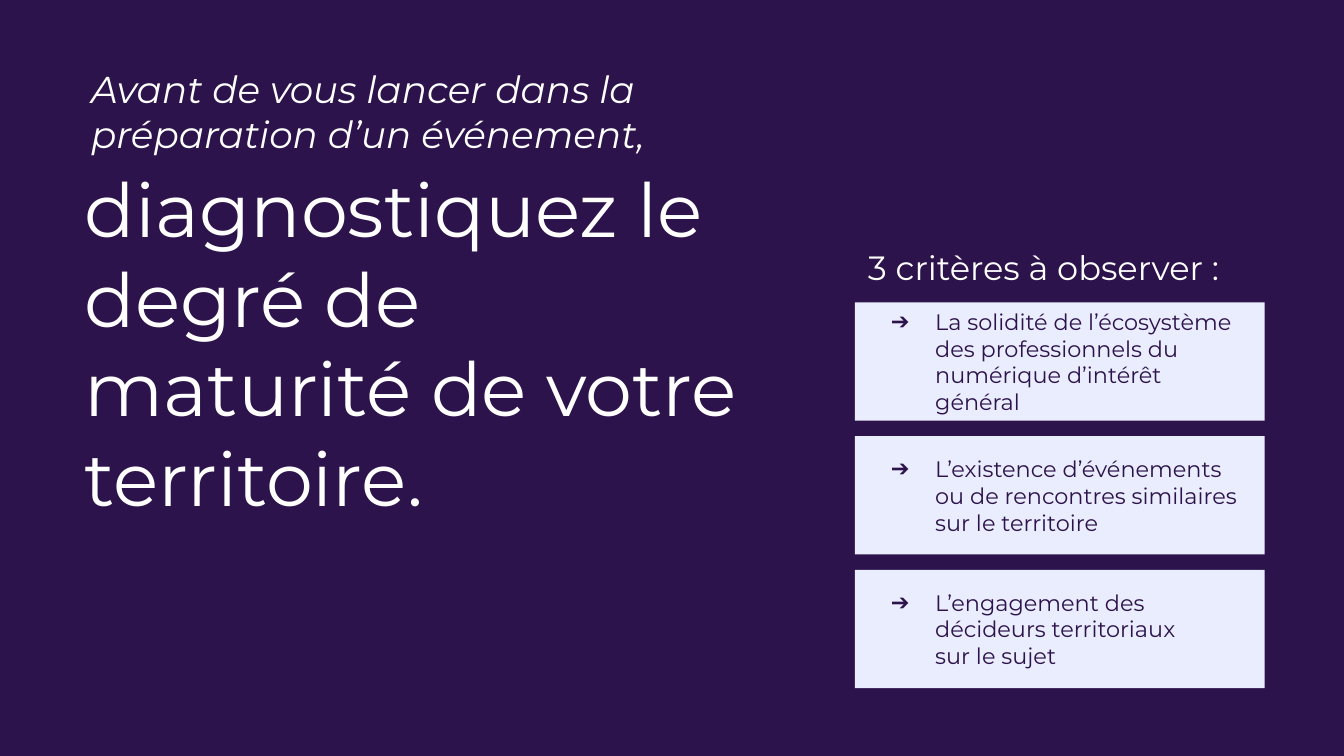
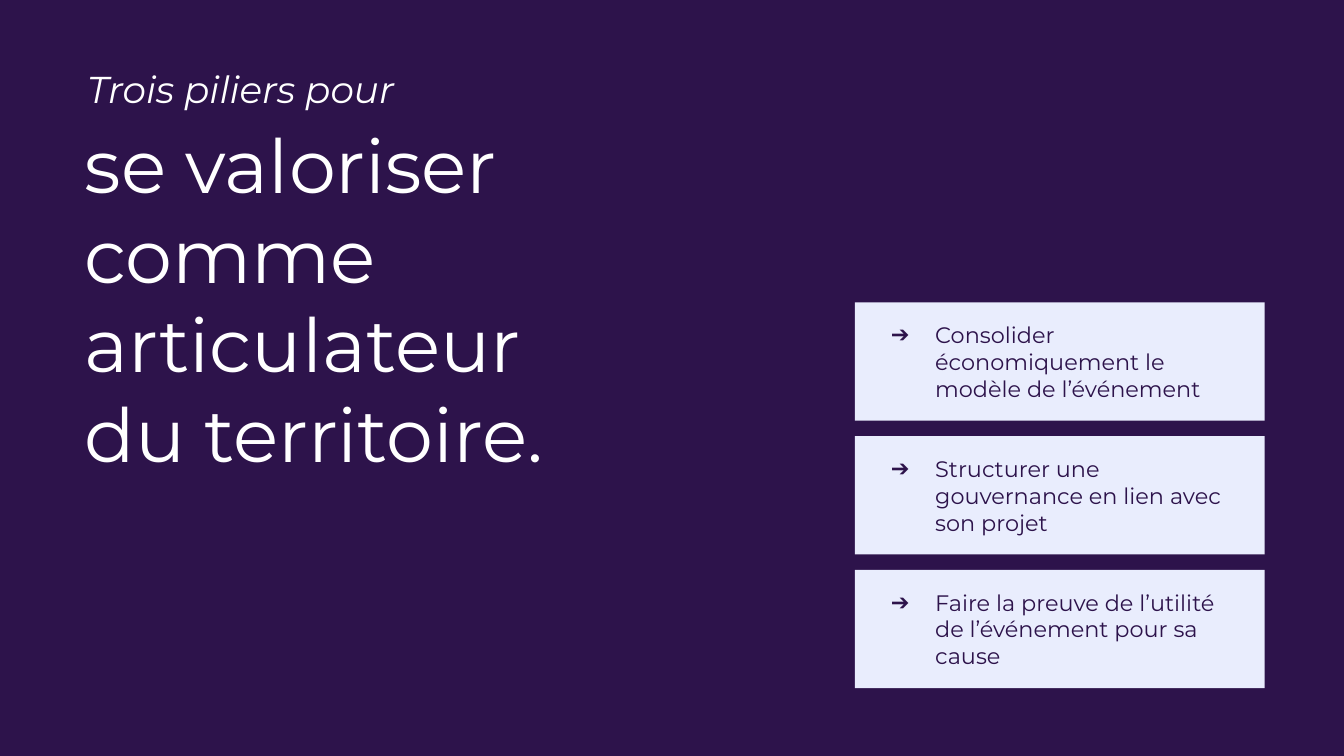
from dataclasses import dataclass

from lxml.etree import SubElement
from pptx import Presentation
from pptx.dml.color import RGBColor
from pptx.enum.shapes import MSO_SHAPE as Shape
from pptx.enum.text import MSO_ANCHOR as Anchor, MSO_AUTO_SIZE as Fit, PP_ALIGN as Align
from pptx.oxml.ns import qn
from pptx.util import Inches, Pt


@dataclass(frozen=True)
class Theme:
    font: str = "Montserrat"
    dark: str = "2D134B"
    pale: str = "E9EDFD"
    white: str = "FFFFFF"
    head: int = 40
    intro: int = 20
    label: int = 18
    body: int = 12


THEME = Theme()
LEFT, WIDTH, HEIGHT = 6.36, 3.05, 0.88
TOP, BOTTOM = 2.25, 5.12
HANG = 0.33


def color(code):
    return RGBColor.from_string(code)


def write(shape, lines, size, ink, slant=False, inset=0.1, anchor=Anchor.TOP, grow=False):
    frame = shape.text_frame
    frame.word_wrap = True
    frame.auto_size = Fit.SHAPE_TO_FIT_TEXT if grow else Fit.NONE
    frame.vertical_anchor = anchor
    frame.margin_left = frame.margin_right = Inches(inset)
    frame.margin_top = frame.margin_bottom = Inches(inset)
    para = frame.paragraphs[0]
    para.alignment = Align.LEFT
    for row, line in enumerate(lines):
        if row:
            para.add_line_break()
        run = para.add_run()
        run.text = line
        font = run.font
        font.name, font.size = THEME.font, Pt(size)
        font.color.rgb = color(ink)
        if slant:
            font.italic = True
    return para


def add_text(slide, box, lines, size, **style):
    shape = slide.shapes.add_textbox(*map(Inches, box))
    write(shape, lines, size, THEME.white, **style)


def add_arrow(para):
    props = para._p.get_or_add_pPr()
    props.set("marL", str(Inches(0.5)))
    props.set("indent", str(-Inches(HANG)))
    tint = SubElement(props, qn("a:buClr"))
    SubElement(tint, qn("a:srgbClr")).set("val", THEME.dark)
    SubElement(props, qn("a:buFont")).set("typeface", THEME.font)
    SubElement(props, qn("a:buChar")).set("char", "➔")


def add_card(slide, top, lines):
    card = slide.shapes.add_shape(Shape.RECTANGLE, *map(Inches, (LEFT, top, WIDTH, HEIGHT)))
    card.shadow.inherit = False
    card.fill.solid()
    card.fill.fore_color.rgb = color(THEME.pale)
    card.line.fill.background()
    add_arrow(write(card, lines, THEME.body, THEME.dark, anchor=Anchor.MIDDLE))
    card.text_frame.margin_right = Inches(0.14)


def add_cards(slide, items):
    gap = (BOTTOM - TOP - len(items) * HEIGHT) / (len(items) - 1)
    for row, lines in enumerate(items):
        add_card(slide, TOP + row * (HEIGHT + gap), lines)


def add_slide(deck, head, head_box, intro, intro_box, items):
    slide = deck.slides.add_slide(deck.slide_layouts[6])
    fill = slide.background.fill
    fill.solid()
    fill.fore_color.rgb = color(THEME.dark)
    add_text(slide, head_box, head, THEME.head, inset=0.05, anchor=Anchor.BOTTOM)
    add_text(slide, intro_box, [intro], THEME.intro, slant=True, grow=True)
    add_cards(slide, items)
    return slide


def main():
    deck = Presentation()
    deck.slide_width = Inches(10)
    deck.slide_height = deck.slide_width * 9 // 16

    slide = add_slide(
        deck,
        ["diagnostiquez le degré de maturité de votre territoire."],
        (0.58, 1.97, 4.99, 1.96),
        "Avant de vous lancer dans la préparation d’un événement,",
        (0.58, 0.39, 5.26, 0.88),
        [
            ["La solidité de l’écosystème des professionnels du numérique d’intérêt général"],
            ["L’existence d’événements ou de rencontres similaires sur le territoire"],
            ["L’engagement des décideurs territoriaux", "sur le sujet"],
        ],
    )
    add_text(slide, (LEFT, 1.74, WIDTH, 0.5), ["3 critères à observer :"], THEME.label, grow=True)

    add_slide(
        deck,
        ["se valoriser", "comme articulateur", "du territoire."],
        (0.58, 0.79, 4.99, 2.81),
        "Trois piliers pour",
        (0.55, 0.39, 5.26, 0.54),
        [
            ["Consolider économiquement le modèle de l’événement"],
            ["Structurer une gouvernance en lien avec son projet"],
            ["Faire la preuve de l’utilité de l’événement pour sa cause"],
        ],
    )
    deck.save("out.pptx")


if __name__ == "__main__":
    main()
